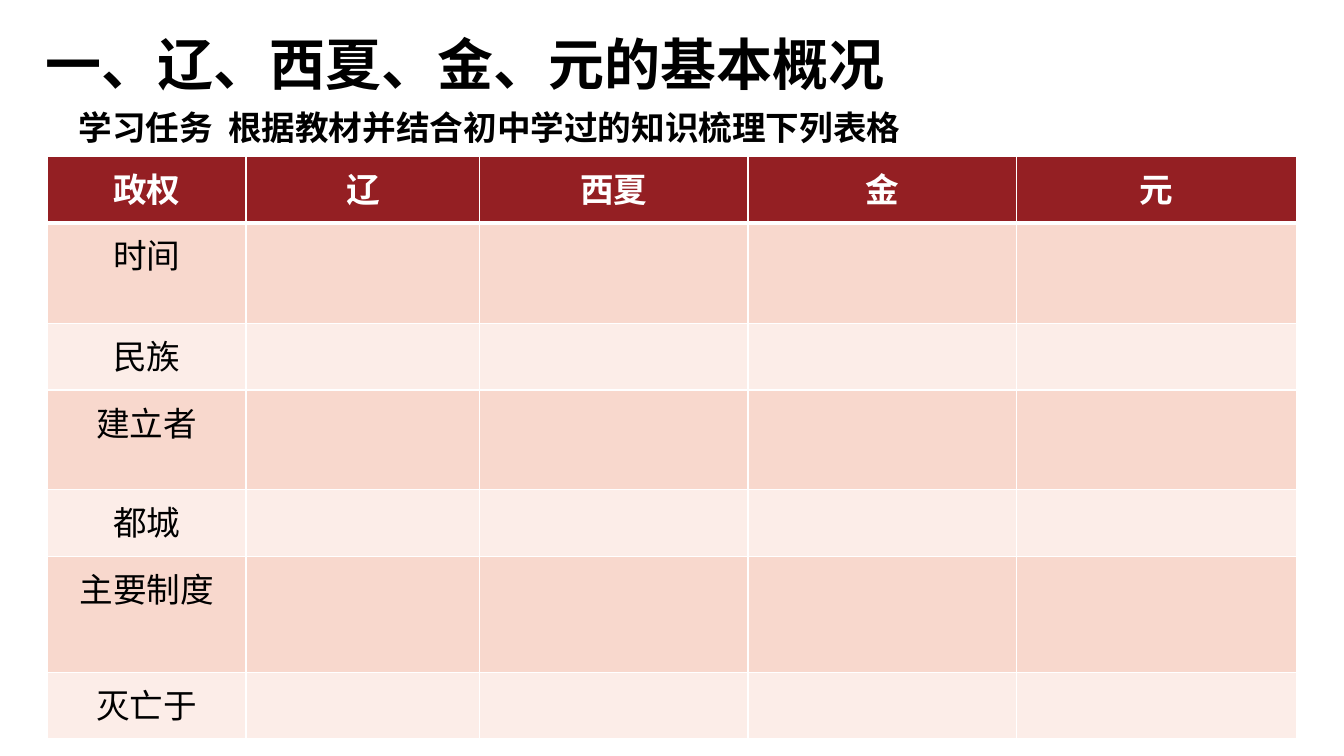
from pptx import Presentation
from pptx.dml.color import RGBColor
from pptx.enum.text import MSO_ANCHOR, MSO_AUTO_SIZE, PP_ALIGN
from pptx.oxml import parse_xml
from pptx.oxml.ns import nsdecls
from pptx.util import Inches, Pt

COLORS = {
    "text": "000000",
    "header": "941F23",
    "band_dark": "F8D8CD",
    "band_light": "FCEDE8",
    "white": "FFFFFF",
}
CHINESE_FONT = "Noto Sans CJK SC"
LATIN_FONT = "Arial"

REGIMES = ["政权", "辽", "西夏", "金", "元"]
TOPICS = ["时间", "民族", "建立者", "都城", "主要制度", "灭亡于"]
COLUMN_WIDTHS = [1.97, 2.32, 2.66, 2.66, 2.78]
ROW_HEIGHTS = [0.66, 1, 0.66, 0.99, 0.66, 1.15, 0.66]


class SlideBuilder:
    def __init__(self, presentation):
        # Layout 5 holds a title only
        self.slide = presentation.slides.add_slide(presentation.slide_layouts[5])

    def add_text(self, paragraph, text, color="text", font_name=CHINESE_FONT,
                 alignment=PP_ALIGN.LEFT, **font_format):
        paragraph.alignment = alignment
        run = paragraph.add_run()
        run.text = text
        run.font.color.rgb = RGBColor.from_string(COLORS[color])
        for attribute, value in {"name": font_name, **font_format}.items():
            setattr(run.font, attribute, value)
        run._r.get_or_add_rPr().append(parse_xml(
            f'<a:ea {nsdecls("a")} typeface="{CHINESE_FONT}"/>'))

    def place_text(self, shape, box, text, size):
        for side, length in zip(("left", "top", "width", "height"), box):
            setattr(shape, side, Inches(length))
        frame_format = {
            "word_wrap": True,
            "auto_size": MSO_AUTO_SIZE.NONE,
            "vertical_anchor": MSO_ANCHOR.TOP,
            "margin_left": Inches(0.1),
            "margin_right": Inches(0.1),
            "margin_top": Inches(0.05),
            "margin_bottom": Inches(0.05),
        }
        for attribute, value in frame_format.items():
            setattr(shape.text_frame, attribute, value)
        self.add_text(shape.text_frame.paragraphs[0], text, size=Pt(size), bold=True)

    def title(self, box, text):
        self.place_text(self.slide.shapes.title, box, text, 40)

    def text_box(self, box, text):
        shape = self.slide.shapes.add_textbox(*map(Inches, box))
        self.place_text(shape, box, text, 24)

    def style_cell(self, cell, fill, widths):
        properties = cell._tc.get_or_add_tcPr()
        for side, width in widths.items():
            properties.append(parse_xml(
                f'<a:ln{side} {nsdecls("a")} w="{Pt(width)}"><a:solidFill>'
                f'<a:srgbClr val="{COLORS["white"]}"/></a:solidFill></a:ln{side}>'))
        cell.fill.solid()
        cell.fill.fore_color.rgb = RGBColor.from_string(COLORS[fill])
        margins = {"margin_left": 0.14, "margin_right": 0.14,
                   "margin_top": 0.07, "margin_bottom": 0.07}
        for attribute, value in margins.items():
            setattr(cell, attribute, Inches(value))

    def table(self, left, top, rows):
        table = self.slide.shapes.add_table(
            len(rows), len(rows[0]), Inches(left), Inches(top),
            Inches(sum(COLUMN_WIDTHS)), Inches(sum(ROW_HEIGHTS))).table
        for column, width in zip(table.columns, COLUMN_WIDTHS):
            column.width = Inches(width)
        for row, height in zip(table.rows, ROW_HEIGHTS):
            row.height = Inches(height)

        for row_index, texts in enumerate(rows):
            is_header = row_index == 0
            band = "band_dark" if row_index % 2 else "band_light"
            widths = {"L": 1, "R": 1, "T": 3 if row_index == 1 else 1,
                      "B": 3 if is_header else 1}
            for column_index, text in enumerate(texts):
                cell = table.cell(row_index, column_index)
                self.style_cell(cell, "header" if is_header else band, widths)
                if text:
                    self.add_text(cell.text_frame.paragraphs[0], text,
                                  color="white" if is_header else "text",
                                  font_name=LATIN_FONT if row_index < 2 else CHINESE_FONT,
                                  alignment=PP_ALIGN.CENTER,
                                  size=Pt(24), bold=is_header)


def main():
    presentation = Presentation()
    presentation.slide_width = Inches(13.33)
    presentation.slide_height = Inches(7.5)
    builder = SlideBuilder(presentation)

    # Heading and task
    builder.title((0.35, 0.24, 9.21, 0.77), "一、辽、西夏、金、元的基本概况")
    builder.text_box((0.68, 1.01, 9.41, 0.5),
                     "学习任务  根据教材并结合初中学过的知识梳理下列表格")

    # Worksheet table, with answers left empty
    blanks = [""] * (len(REGIMES) - 1)
    builder.table(0.47, 1.55, [REGIMES] + [[topic] + blanks for topic in TOPICS])

    presentation.save("out.pptx")


if __name__ == "__main__":
    main()
